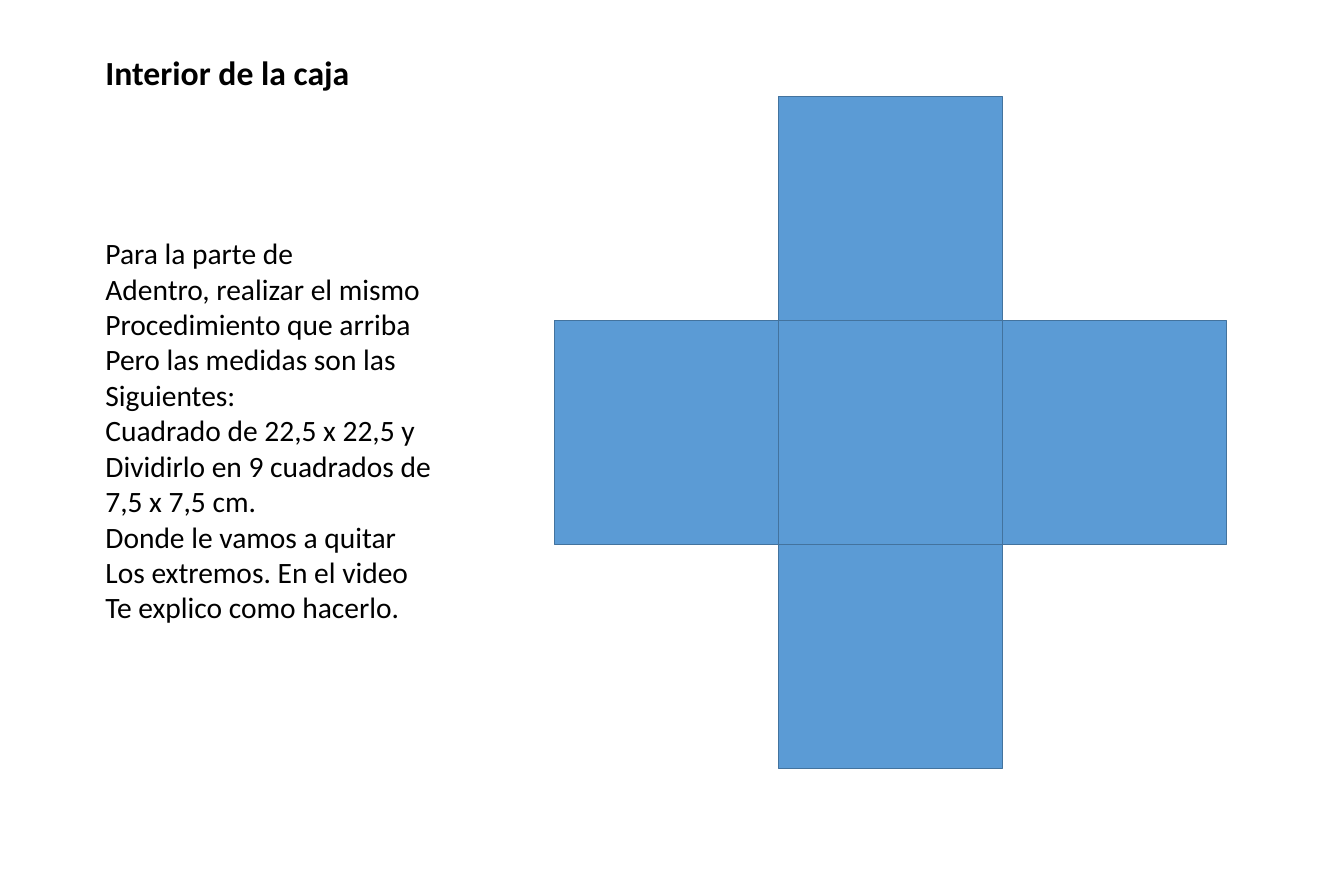
"""Build the slide that shows the inside of the box as a cross of five squares."""
from dataclasses import dataclass

from lxml import etree
from pptx import Presentation
from pptx import slide as sl
from pptx import util as u
from pptx.dml import color
from pptx.enum import shapes, text
from pptx.oxml import ns
from pptx.shapes import placeholder as ph

COLOURS = {"ink": "000000", "square": "5B9BD5", "edge": "43739E"}
SIDE = 2.953
CROSS_LEFT, CROSS_TOP = 7.31, 1.27
FRAME_FORMAT = {
    "word_wrap": False,
    "auto_size": text.MSO_AUTO_SIZE.SHAPE_TO_FIT_TEXT,
    "vertical_anchor": text.MSO_ANCHOR.TOP,
}
PARAGRAPH_FORMAT = {
    "alignment": text.PP_ALIGN.LEFT,
    "space_before": u.Pt(0),
    "space_after": u.Pt(0),
    "line_spacing": 1.0,
}
INSTRUCTIONS = [
    "Para la parte de",
    "Adentro, realizar el mismo",
    "Procedimiento que arriba",
    "Pero las medidas son las",
    "Siguientes:",
    "Cuadrado de 22,5 x 22,5 y",
    "Dividirlo en 9 cuadrados de",
    "7,5 x 7,5 cm.",
    "Donde le vamos a quitar",
    "Los extremos. En el video",
    "Te explico como hacerlo.",
]


@dataclass(frozen=True)
class Square:
    """Place of one square in the three by three grid."""

    column: int
    row: int


@dataclass(frozen=True)
class Passage:
    """Lines of text with their box and type size."""

    lines: list[str]
    left: float
    top: float
    width: float
    height: float
    size: int
    bold: bool


CROSS = [Square(1, 0), Square(0, 1), Square(1, 1), Square(2, 1), Square(1, 2)]
HEADING = Passage(["Interior de la caja"], 1.29, 0.63, 3.45, 0.64, 32, True)
STEPS = Passage(INSTRUCTIONS, 1.29, 3.05, 4.54, 5.28, 28, False)


def rgb(name: str) -> color.RGBColor:
    """Return the named colour."""
    return color.RGBColor.from_string(COLOURS[name])


def apply_format(target: object, values: dict[str, object]) -> None:
    """Set every attribute in values on the target."""
    for attribute, value in values.items():
        setattr(target, attribute, value)


def write_passage(holder: ph.SlidePlaceholder, passage: Passage) -> None:
    """Move a placeholder and fill it with unbulleted lines."""
    apply_format(holder, {
        side: u.Inches(getattr(passage, side))
        for side in ("left", "top", "width", "height")
    })
    frame = holder.text_frame
    frame.text = "\n".join(passage.lines)
    apply_format(frame, FRAME_FORMAT)
    for line in frame.paragraphs:
        apply_format(line, PARAGRAPH_FORMAT)
        properties = line._p.get_or_add_pPr()
        properties.set("marL", "0")
        properties.set("indent", "0")
        etree.SubElement(properties, ns.qn("a:buNone"))
        font = line.runs[0].font
        apply_format(font, {"name": "Calibri", "size": u.Pt(passage.size), "bold": passage.bold})
        font.color.rgb = rgb("ink")


def draw_square(slide: sl.Slide, square: Square) -> None:
    """Draw one square of the cross."""
    panel = slide.shapes.add_shape(
        shapes.MSO_SHAPE.RECTANGLE,
        u.Inches(CROSS_LEFT + square.column * SIDE),
        u.Inches(CROSS_TOP + square.row * SIDE),
        u.Inches(SIDE),
        u.Inches(SIDE),
    )
    panel.shadow.inherit = False
    panel.fill.solid()
    panel.fill.fore_color.rgb = rgb("square")
    panel.line.color.rgb = rgb("edge")
    panel.line.width = u.Pt(1)


def main() -> None:
    """Build and save the slide."""
    deck = Presentation()
    deck.slide_width, deck.slide_height = u.Inches(17.72), u.Inches(11.81)
    interior = deck.slides.add_slide(deck.slide_layouts[1])
    write_passage(interior.shapes.title, HEADING)
    write_passage(interior.placeholders[1], STEPS)
    for square in CROSS:
        draw_square(interior, square)
    deck.save("out.pptx")


if __name__ == "__main__":
    main()
